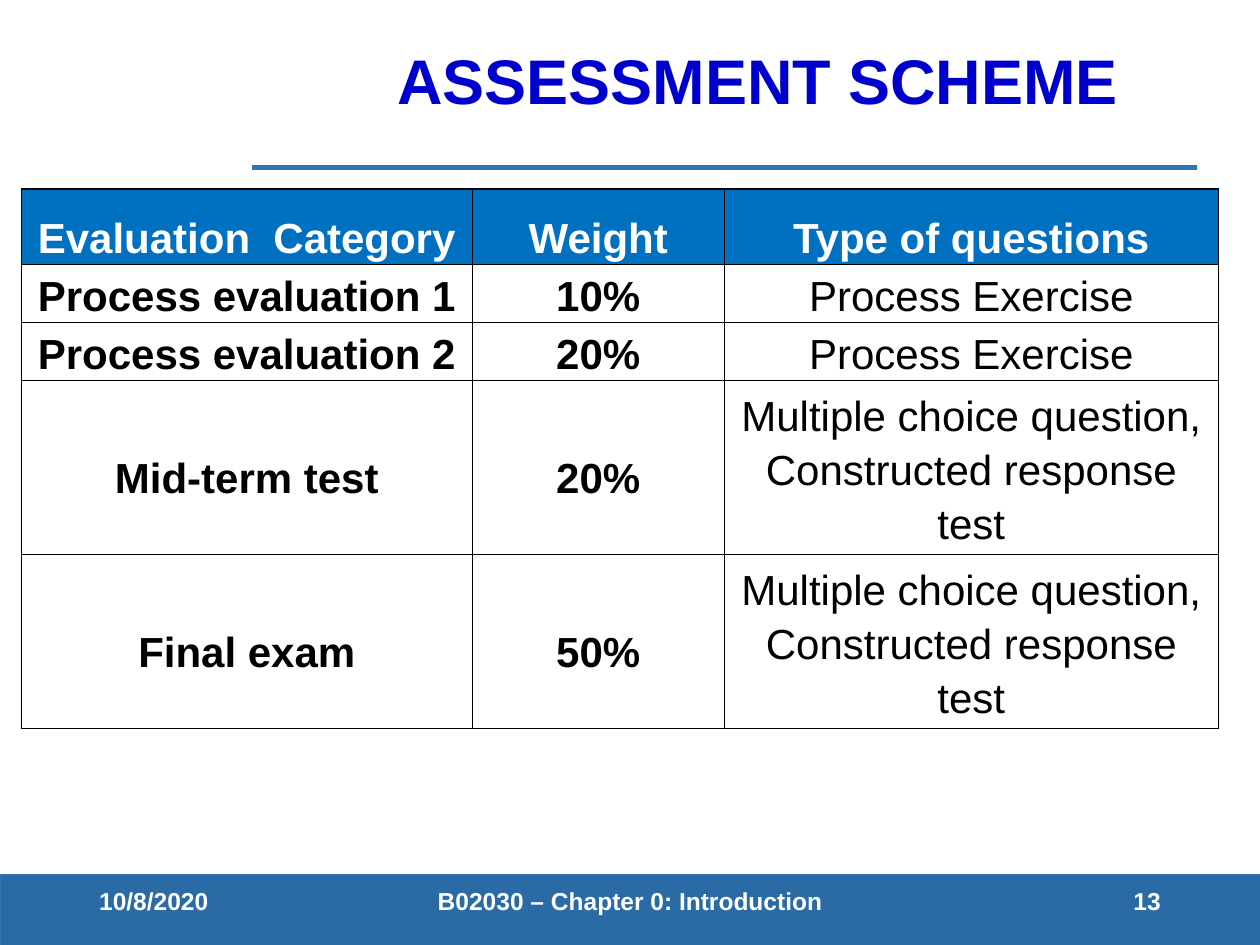
"""Build the assessment scheme slide with its weighting table and footer."""
import pptx
import pptx.dml.color
import pptx.enum.shapes
import pptx.enum.text
import pptx.oxml
import pptx.oxml.ns
import pptx.util

Cm = pptx.util.Cm
Pt = pptx.util.Pt
RGBColor = pptx.dml.color.RGBColor
Align = pptx.enum.text.PP_ALIGN
Anchor = pptx.enum.text.MSO_ANCHOR

TITLE_BLUE = RGBColor(0x00, 0x00, 0xCC)
HEADER_BLUE = RGBColor(0x00, 0x70, 0xC0)
BAND_BLUE = RGBColor(0x2A, 0x6B, 0xA6)
RULE_BLUE = RGBColor(0x2E, 0x75, 0xB6)
WHITE = RGBColor(0xFF, 0xFF, 0xFF)
BLACK = RGBColor(0x00, 0x00, 0x00)

TITLE = "ASSESSMENT SCHEME"
TEST_QUESTIONS = "Multiple choice question, Constructed response test"
SCHEME = [
    ("Evaluation  Category", "Weight", "Type of questions"),
    ("Process evaluation 1", "10%", "Process Exercise"),
    ("Process evaluation 2", "20%", "Process Exercise"),
    ("Mid-term test", "20%", TEST_QUESTIONS),
    ("Final exam", "50%", TEST_QUESTIONS),
]
COLUMN_WIDTHS = [9.09, 5.08, 9.96]
ROW_HEIGHTS = [1.27, 0.81, 0.81, 1.6, 1.6]
SHORT_ROWS = (1, 2)
FOOTER = [
    ("10/8/2020", 1.75, 5.72, Align.LEFT),
    ("B02030 – Chapter 0: Introduction", 8.41, 8.59, Align.CENTER),
    ("13", 17.93, 5.72, Align.RIGHT),
]


def write(frame, text, size=24, color=BLACK, bold=True, align=Align.CENTER, spacing=None):
    frame.word_wrap = True
    para = frame.paragraphs[0]
    para.alignment = align
    if spacing:
        para.line_spacing = spacing
    span = para.add_run()
    span.text = text
    span.font.name = "Arial"
    span.font.size = Pt(size)
    span.font.bold = bold
    span.font.color.rgb = color


def add_borders(cell):
    properties = cell._tc.get_or_add_tcPr()
    for index, side in enumerate(("lnL", "lnR", "lnT", "lnB")):
        border = pptx.oxml.parse_xml(
            f'<a:{side} {pptx.oxml.ns.nsdecls("a")} w="{Pt(1)}"><a:solidFill>'
            f'<a:srgbClr val="{BLACK}"/></a:solidFill></a:{side}>')
        properties.insert(index, border)


def add_title(page):
    title = page.shapes.title
    title.left, title.top, title.width, title.height = Cm(5.08), Cm(0), Cm(20.4), Cm(3.38)
    title.text_frame.vertical_anchor = Anchor.MIDDLE
    write(title.text_frame, TITLE, size=36, color=TITLE_BLUE, spacing=0.9)


def add_rule(page):
    rule = page.shapes.add_connector(
        pptx.enum.shapes.MSO_CONNECTOR.STRAIGHT, Cm(5.08), Cm(3.38), Cm(24.13), Cm(3.38))
    rule.line.color.rgb = RULE_BLUE
    rule.line.width = Pt(3)
    rule._element.spPr.append(
        pptx.oxml.parse_xml(f'<a:effectLst {pptx.oxml.ns.nsdecls("a")}/>'))


def add_footer(page):
    band = page.shapes.add_shape(
        pptx.enum.shapes.MSO_SHAPE.RECTANGLE, Cm(0), Cm(17.63), Cm(25.5), Cm(1.47))
    band.shadow.inherit = False
    band.fill.solid()
    band.fill.fore_color.rgb = BAND_BLUE
    band.line.color.rgb = RULE_BLUE
    band.line.width = Pt(1)
    for text, left, width, align in FOOTER:
        box = page.shapes.add_textbox(Cm(left), Cm(17.65), Cm(width), Cm(1.02))
        box.text_frame.vertical_anchor = Anchor.MIDDLE
        write(box.text_frame, text, size=14, color=WHITE, align=align)


def add_scheme(page):
    height = Cm(10.29)
    holder = page.shapes.add_table(
        len(SCHEME), len(COLUMN_WIDTHS), Cm(0.43), Cm(3.81), Cm(sum(COLUMN_WIDTHS)), height)
    table = holder.table
    for column, width in zip(table.columns, COLUMN_WIDTHS):
        column.width = Cm(width)
    for row, row_height in zip(table.rows, ROW_HEIGHTS):
        row.height = Cm(row_height)
    holder.height = height
    for row, texts in enumerate(SCHEME):
        for column, text in enumerate(texts):
            cell = table.cell(row, column)
            header = row == 0
            questions = column == 2 and not header
            cell.vertical_anchor = Anchor.MIDDLE
            cell.margin_left = cell.margin_right = Cm(0.18)
            cell.margin_top = cell.margin_bottom = Cm(0)
            cell.fill.solid()
            cell.fill.fore_color.rgb = HEADER_BLUE if header else WHITE
            add_borders(cell)
            write(cell.text_frame, text, color=WHITE if header else BLACK, bold=not questions,
                  spacing=1.15 if questions or row in SHORT_ROWS else 1.5)


def main():
    deck = pptx.Presentation()
    deck.slide_width, deck.slide_height = Cm(25.4), Cm(19.05)
    page = deck.slides.add_slide(deck.slide_layouts[5])
    add_footer(page)
    add_rule(page)
    add_title(page)
    add_scheme(page)
    deck.save("out.pptx")


if __name__ == "__main__":
    main()
